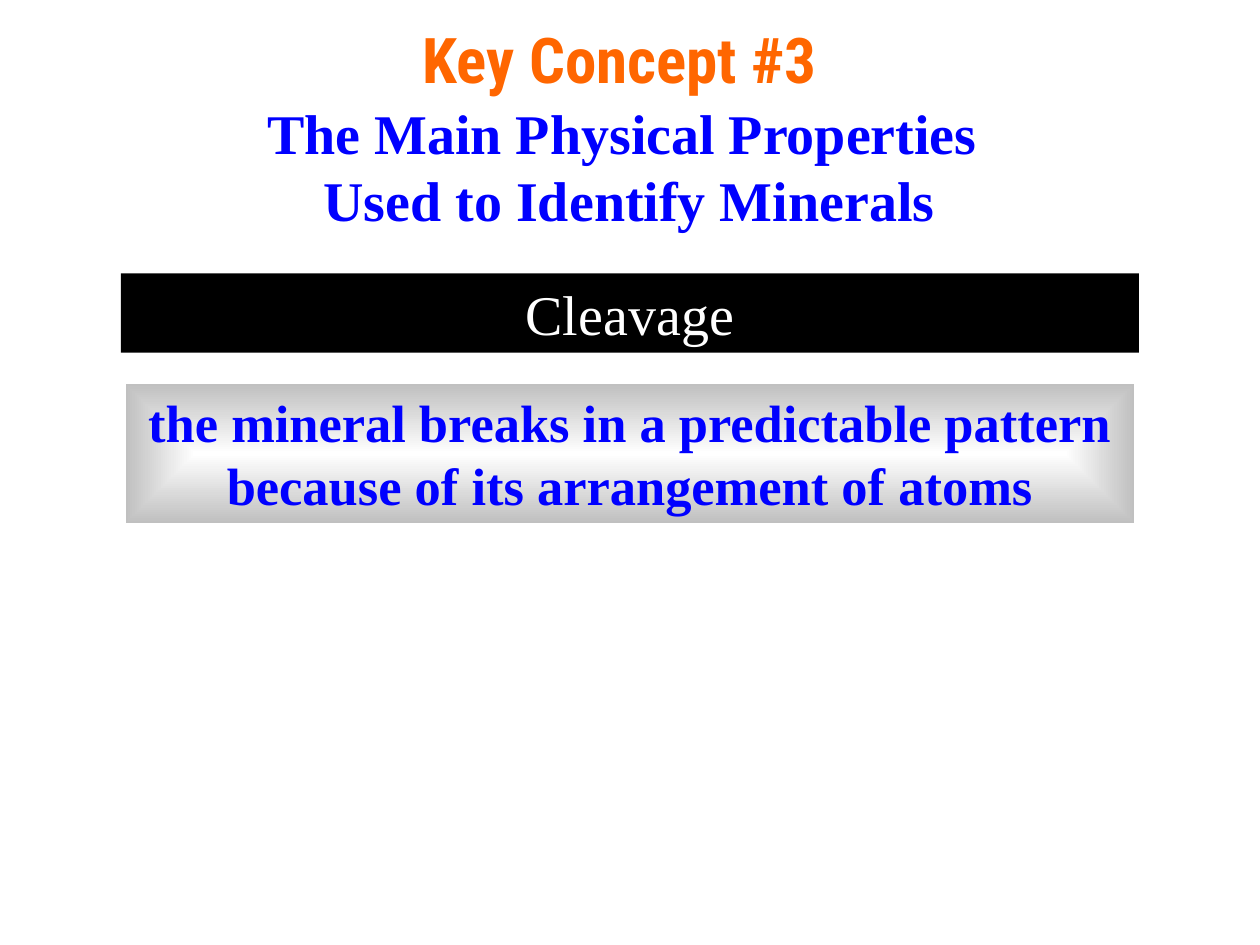
from pptx import Presentation
from pptx.dml.color import RGBColor
from pptx.enum.shapes import MSO_SHAPE
from pptx.enum.text import MSO_ANCHOR, MSO_AUTO_SIZE, PP_ALIGN
from pptx.oxml import parse_xml
from pptx.oxml.ns import nsdecls, qn
from pptx.util import Inches, Pt

RECT = MSO_SHAPE.RECTANGLE
TOP, MIDDLE = MSO_ANCHOR.TOP, MSO_ANCHOR.MIDDLE
GROW = MSO_AUTO_SIZE.SHAPE_TO_FIT_TEXT
CENTER = PP_ALIGN.CENTER

ORANGE = RGBColor(0xFF, 0x66, 0x00)
BLUE = RGBColor(0x00, 0x00, 0xFF)
BLACK = RGBColor(0x00, 0x00, 0x00)
WHITE = RGBColor(0xFF, 0xFF, 0xFF)
SILVER = RGBColor(0xC0, 0xC0, 0xC0)

HEADING_FONT = "Roboto Condensed"
BODY_FONT = "Times New Roman"
COLS, ROWS = 10, 7.5


class ConceptSlide:
    """Places centred text and filled bars on a grid of columns and rows."""

    def __init__(self, prs):
        self.col = prs.slide_width / COLS
        self.row = prs.slide_height / ROWS
        self.s = prs.slides.add_slide(prs.slide_layouts[6])

    def place(self, left, top, width, height):
        return (round(left * self.col), round(top * self.row),
                round(width * self.col), round(height * self.row))

    def set_text(self, sp, lines, size, color, font=BODY_FONT, bold=True,
                 anchor=TOP, wrap=True):
        tf = sp.text_frame
        tf.word_wrap = wrap
        tf.vertical_anchor = anchor
        tf.text = "\n".join(lines)
        for p in tf.paragraphs:
            p.alignment = CENTER
            p.font.name = font
            p.font.size = Pt(size)
            p.font.bold = bold
            p.font.color.rgb = color
        return tf

    def text(self, at, lines, size, color, **style):
        sp = self.s.shapes.add_textbox(*self.place(*at))
        return self.set_text(sp, lines, size, color, **style)

    def bar(self, at, lines, size, color, fill, edge=None, **style):
        """A plain bar, or one shaded from its middle out to an edge colour."""
        sp = self.s.shapes.add_shape(RECT, *self.place(*at))
        sp.shadow.inherit = False
        sp.line.fill.background()
        if edge is None:
            sp.fill.solid()
            sp.fill.fore_color.rgb = fill
        else:
            self.shade(sp, fill, edge)
        self.set_text(sp, lines, size, color, **style).auto_size = GROW

    def shade(self, sp, inner, outer):
        sp.fill.gradient()
        for stop, color in zip(sp.fill.gradient_stops, (inner, outer)):
            stop.color.rgb = color
        # Swap the linear direction for a path that follows the shape
        grad = sp._element.spPr.find(qn("a:gradFill"))
        grad.replace(grad.find(qn("a:lin")), parse_xml(
            f'<a:path {nsdecls("a")} path="shape"><a:fillToRect '
            'l="50000" t="50000" r="50000" b="50000"/></a:path>'))


def main():
    prs = Presentation()
    prs.slide_width, prs.slide_height = Inches(10), Inches(7.5)
    slide = ConceptSlide(prs)

    # Heading and topic
    slide.text((2.42, 0.17, 5, 0.58), ["Key Concept #3"], 36, ORANGE,
               font=HEADING_FONT, anchor=MIDDLE)
    topic = slide.text((2.02, 0.73, 5.95, 1.17),
                       ["The Main Physical Properties ",
                        "Used to Identify Minerals"], 32, BLUE, wrap=False)
    topic.auto_size = GROW

    # Property and its definition
    slide.bar((0.96, 2.17, 8.08, 0.63), ["Cleavage"], 32, WHITE, BLACK,
              bold=False)
    slide.bar((1, 3.05, 8, 1.1),
              ["the mineral breaks in a predictable pattern",
               "because of its arrangement of atoms"], 30, BLUE, WHITE,
              edge=SILVER)

    prs.save("out.pptx")


if __name__ == "__main__":
    main()
